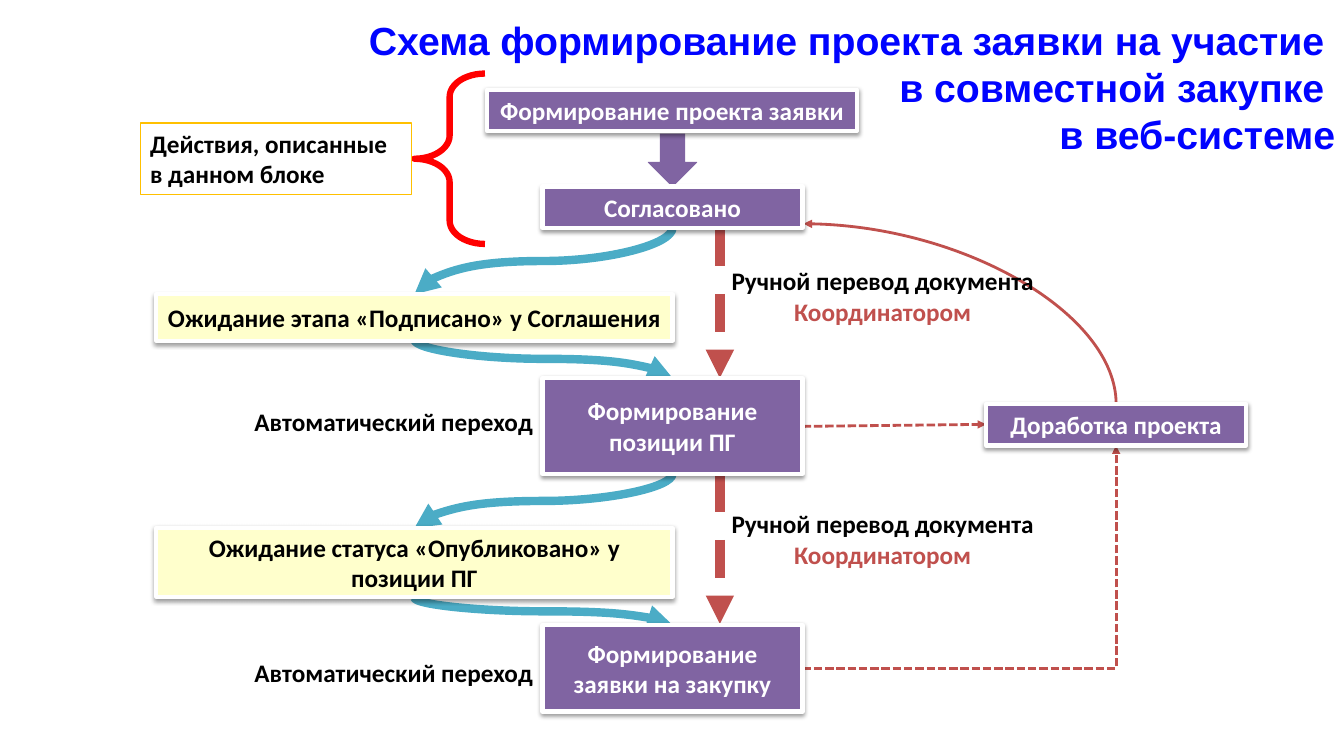
import pptx
import pptx.util
import pptx.dml.color
import pptx.enum.dml
import pptx.enum.shapes
import pptx.enum.text
import pptx.oxml
import pptx.oxml.ns
from dataclasses import dataclass

Inches = pptx.util.Inches
Pt = pptx.util.Pt
Shape = pptx.enum.shapes.MSO_SHAPE
Link = pptx.enum.shapes.MSO_CONNECTOR
Dash = pptx.enum.dml.MSO_LINE
Align = pptx.enum.text.PP_ALIGN
Anchor = pptx.enum.text.MSO_ANCHOR
Fit = pptx.enum.text.MSO_AUTO_SIZE

PURPLE, CREAM, WHITE, BLACK = "8064A2", "FFFFCC", "FFFFFF", "000000"
RED, TEAL, AMBER, BLUE, SCARLET = "C0504D", "4BACC6", "FFC000", "0003FF", "FF0000"
NS = pptx.oxml.ns.nsdecls("a")


@dataclass
class Box:
    """A step of the scheme: purple with white text, or cream with black."""
    text: str
    left: float
    top: float
    width: float
    height: float
    fill: str = PURPLE
    ink: str = WHITE


@dataclass
class Label:
    text: str
    left: float
    top: float
    accent: str = ""


@dataclass
class Arrow:
    """An arrow; a turned one has its box rotated by 90 or 270 degrees."""
    start: tuple[float, float]
    end: tuple[float, float]
    color: str = RED
    weight: float = 2
    dash: Dash | None = None
    kind: Link = Link.STRAIGHT
    preset: str = ""
    turn: int = 0
    flip: str = ""


MID, SIDE, REWORK = 6.67, 4.11, 11.07
LABEL = 3.27, 0.41

BOXES = [
    Box("Формирование проекта заявки", 4.83, 0.89, 3.67, 0.41),
    Box("Доработка проекта", 9.78, 4.01, 2.58, 0.41),
    Box("Ожидание этапа «Подписано» у Соглашения", 1.55, 2.92, 5.12, 0.46, CREAM, BLACK),
    Box("Ожидание статуса «Опубликовано» у позиции ПГ", 1.55, 5.24, 5.12, 0.68, CREAM, BLACK),
    Box("Согласовано", 5.38, 1.85, 2.58, 0.41),
    Box("Формирование позиции ПГ", 5.38, 3.75, 2.58, 0.95),
    Box("Формирование заявки на закупку", 5.38, 6.2, 2.58, 0.86),
]

LABELS = [
    Label("Автоматический переход", 2.27, 3.98),
    Label("Автоматический переход", 2.27, 6.47),
    Label("Ручной перевод документа ", 7.12, 2.73, "Координатором"),
    Label("Ручной перевод документа ", 7.12, 5.14, "Координатором"),
]

ARROWS = [
    Arrow((REWORK, 4.01), (7.97, 2.22), kind=Link.CURVE,
          preset="curvedConnector2", turn=270, flip="flipV"),
    Arrow((7.96, 4.23), (9.78, 4.21), dash=Dash.SQUARE_DOT),
    Arrow((7.96, 6.63), (REWORK, 4.42), dash=Dash.SQUARE_DOT,
          kind=Link.ELBOW, preset="bentConnector2"),
]
ARROWS += [Arrow((7.14, y), (7.14, y + 1.49), weight=6.75, dash=Dash.DASH)
           for y in (2.26, 4.7)]
ARROWS += [Arrow((MID, top), (SIDE, low), TEAL, 6, kind=Link.CURVE, turn=90)
           for top, low in ((2.26, 2.92), (4.7, 5.24))]
ARROWS += [Arrow((SIDE, top), (MID, low), TEAL, 6, kind=Link.CURVE, turn=270, flip="flipH")
           for top, low in ((3.37, 3.75), (5.93, 6.2))]


def rgb(code: str) -> pptx.dml.color.RGBColor:
    return pptx.dml.color.RGBColor.from_string(code)


def style(par, ink: str, size: float = 18, face: str = "Calibri", align=Align.CENTER) -> None:
    par.alignment = align
    par.font.size = Pt(size)
    par.font.name = face
    par.font.bold = True
    par.font.color.rgb = rgb(ink)


def add_form(slide, kind: Shape, area: tuple, fill: str, line: str, weight: float):
    """Add a preset shape without shadow; an empty fill leaves it open."""
    form = slide.shapes.add_shape(kind, *map(Inches, area))
    form.shadow.inherit = False
    if fill:
        form.fill.solid()
        form.fill.fore_color.rgb = rgb(fill)
    else:
        form.fill.background()
    form.line.color.rgb = rgb(line)
    form.line.width = Pt(weight)
    return form


def add_box(slide, box: Box) -> None:
    area = box.left, box.top, box.width, box.height
    form = add_form(slide, Shape.RECTANGLE, area, box.fill, WHITE, 3)
    form._element.spPr.find(pptx.oxml.ns.qn("a:effectLst")).append(pptx.oxml.parse_xml(
        f'<a:outerShdw {NS} blurRad="39370" dist="20320" dir="5400000" rotWithShape="0">'
        f'<a:srgbClr val="{BLACK}"><a:alpha val="38000"/></a:srgbClr></a:outerShdw>'))
    frame = form.text_frame
    frame.word_wrap = True
    frame.vertical_anchor = Anchor.MIDDLE
    frame.text = box.text
    style(frame.paragraphs[0], box.ink)


def add_label(slide, label: Label) -> None:
    area = label.left, label.top, *LABEL
    frame = slide.shapes.add_textbox(*map(Inches, area)).text_frame
    frame.word_wrap = True
    frame.vertical_anchor = Anchor.MIDDLE
    frame.text = label.text
    par = frame.paragraphs[0]
    style(par, BLACK)
    if label.accent:
        run = par.add_run()
        run.text = label.accent
        run.font.color.rgb = rgb(RED)


def add_arrow(slide, arrow: Arrow) -> None:
    (x1, y1), (x2, y2) = arrow.start, arrow.end
    if arrow.turn:
        cx, cy = (x1 + x2) / 2, (y1 + y2) / 2
        dx, dy = abs(y2 - y1) / 2, abs(x2 - x1) / 2
        x1, y1, x2, y2 = cx - dx, cy - dy, cx + dx, cy + dy
    link = slide.shapes.add_connector(arrow.kind, *map(Inches, (x1, y1, x2, y2)))
    link.line.color.rgb = rgb(arrow.color)
    link.line.width = Pt(arrow.weight)
    if arrow.dash:
        link.line.dash_style = arrow.dash
    props = link._element.spPr
    if arrow.turn:
        props.xfrm.set("rot", str(arrow.turn * 60000))
    if arrow.flip:
        props.xfrm.set(arrow.flip, "1")
    if arrow.preset:
        props.find(pptx.oxml.ns.qn("a:prstGeom")).set("prst", arrow.preset)
    link.line._ln.append(pptx.oxml.parse_xml(f'<a:tailEnd {NS} type="triangle"/>'))
    props.append(pptx.oxml.parse_xml(f"<a:effectLst {NS}/>"))


def add_title(slide) -> None:
    area = -0.15, 0.11, 13.49, 1.51
    frame = slide.shapes.add_textbox(*map(Inches, area)).text_frame
    frame.word_wrap = True
    frame.auto_size = Fit.SHAPE_TO_FIT_TEXT
    frame.text = ("Схема формирование проекта заявки на участие \n"
                  "в совместной закупке \nв веб-системе")
    for par in frame.paragraphs:
        style(par, BLUE, 28, "Arial", Align.RIGHT)


def add_note(slide) -> None:
    """Add the brace and the remark on the steps it spans."""
    brace = add_form(slide, Shape.LEFT_BRACE, (4.11, 0.73, 0.7, 1.69), "", SCARLET, 4.5)
    brace.adjustments[0] = 0.33
    note = add_form(slide, Shape.RECTANGLE, (1.39, 1.22, 2.69, 0.71), WHITE, AMBER, 0.75)
    frame = note.text_frame
    frame.word_wrap = True
    frame.auto_size = Fit.SHAPE_TO_FIT_TEXT
    frame.vertical_anchor = Anchor.TOP
    frame.text = "Действия, описанные в данном блоке"
    style(frame.paragraphs[0], BLACK, align=Align.LEFT)


def main() -> None:
    deck = pptx.Presentation()
    deck.slide_width, deck.slide_height = Inches(13.33), Inches(7.5)
    slide = deck.slides.add_slide(deck.slide_layouts[6])
    add_title(slide)
    add_note(slide)
    for arrow in ARROWS:
        add_arrow(slide, arrow)
    down = add_form(slide, Shape.RIGHT_ARROW, (6.41, 1.35, 0.52, 0.48), PURPLE, PURPLE, 0.75)
    down.rotation = 90
    for box in BOXES:
        add_box(slide, box)
    for label in LABELS:
        add_label(slide, label)
    deck.save("out.pptx")


if __name__ == "__main__":
    main()
